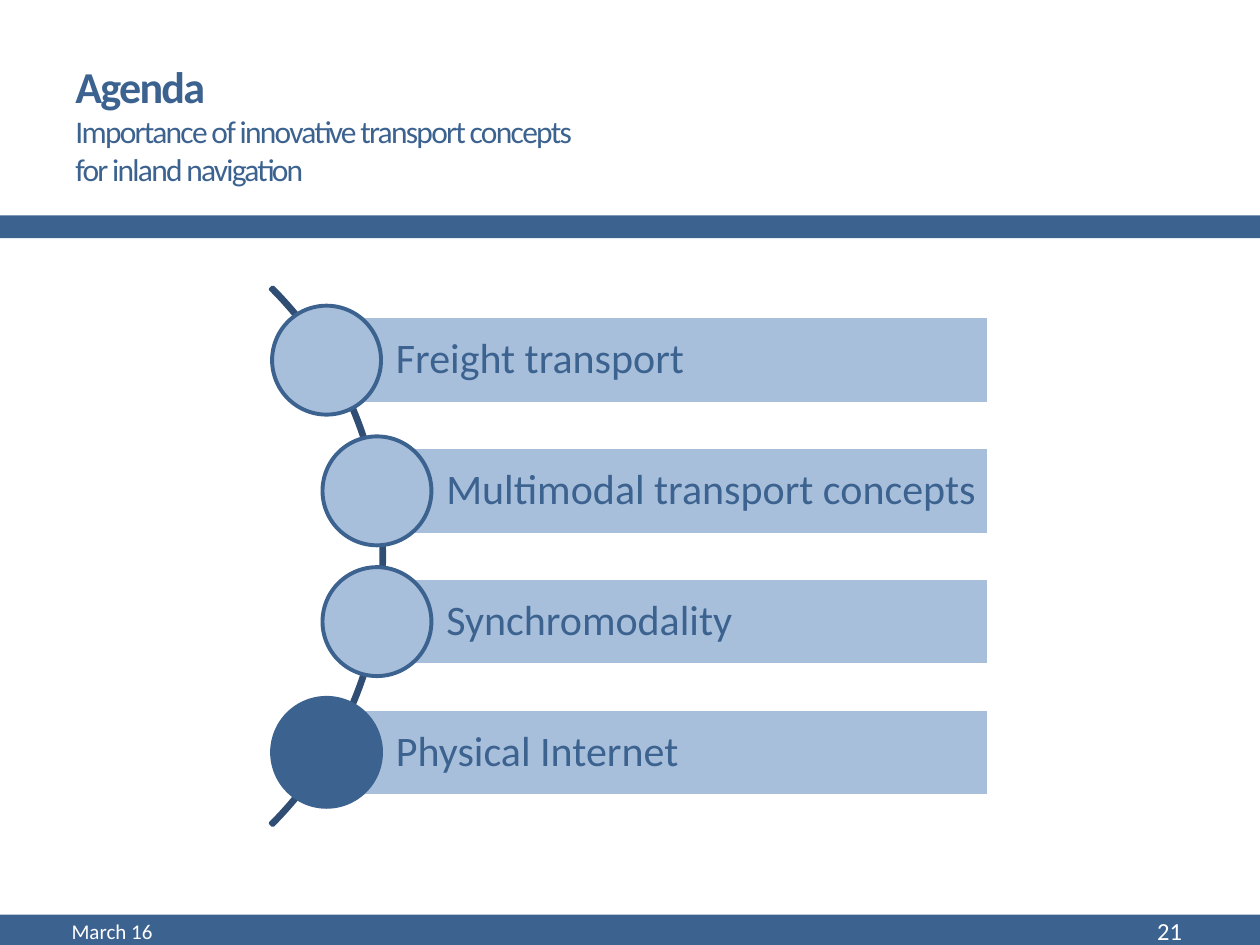
from pptx import Presentation
from pptx.dml.color import RGBColor
from pptx.enum.shapes import MSO_SHAPE as Shape
from pptx.enum.text import MSO_ANCHOR as Anchor, PP_ALIGN as Align
from pptx.util import Inches, Pt

BLUE = RGBColor(0x3C, 0x62, 0x8F)
LIGHT_BLUE = RGBColor(0xA8, 0xBF, 0xDB)
DARK_BLUE = RGBColor(0x30, 0x4E, 0x73)
WHITE = RGBColor(0xFF, 0xFF, 0xFF)
FONT = "Calibri"
WIDTH, HEIGHT = 10, 7.5

TOPICS = ["Freight transport", "Multimodal transport concepts",
          "Synchromodality", "Physical Internet"]
CURRENT_TOPIC = 3


def add_figure(slide, kind, box, fill=None, line=None, line_width=2.08):
    figure = slide.shapes.add_shape(kind, *map(Inches, box))
    figure.shadow.inherit = False
    if fill is None:
        figure.fill.background()
    else:
        figure.fill.solid()
        figure.fill.fore_color.rgb = fill
    if line is None:
        figure.line.fill.background()
    else:
        figure.line.color.rgb = line
        figure.line.width = Pt(line_width)
    return figure


def write(shape, text, sizes, color, align=Align.LEFT):
    """Fill the shape with one paragraph; sizes holds one size per line."""
    frame = shape.text_frame
    frame.word_wrap = True
    frame.vertical_anchor = Anchor.MIDDLE
    paragraph = frame.paragraphs[0]
    paragraph.text = text
    paragraph.alignment = align
    for run, size in zip(paragraph.runs, sizes):
        run.font.name = FONT
        run.font.size = Pt(size)
        run.font.color.rgb = color
    return paragraph


def add_label(slide, box, text, sizes, color, align=Align.LEFT):
    label = slide.shapes.add_textbox(*map(Inches, box))
    return write(label, text, sizes, color, align)


def add_header(slide, left, top, width, height):
    # Rule along the bottom of the header, bleeding over both edges
    rule = 0.18
    add_figure(slide, Shape.RECTANGLE,
               (left - 0.02, top + height - rule, width + 0.12, rule), BLUE)
    # Title with a two-line subtitle
    title = add_label(
        slide, (left + 0.5, top + 0.44, 5.21, 1.08),
        "Agenda\vImportance of innovative transport concepts\vfor inland navigation",
        (25.2, 18, 18), BLUE)
    title.runs[0].font.bold = True
    for run in title.runs:
        run.font._element.set("spc", "-100")


def add_agenda(slide, left, top, width, height):
    row = height / len(TOPICS)
    bar_height, circle = row * 2 / 3, row * 5 / 6
    indent = 0.4

    # Arc that links the circles: a quarter of a large ring
    diameter = 6.04
    arc = add_figure(slide, Shape.BLOCK_ARC,
                     (left + 0.89 - diameter, top + (height - diameter) / 2,
                      diameter, diameter), line=DARK_BLUE)
    for index, value in enumerate((189, 27, 0.004)):
        arc.adjustments[index] = value

    for index, topic in enumerate(TOPICS):
        middle = top + (index + 0.5) * row
        is_inner = 0 < index < len(TOPICS) - 1
        circle_left = left + (indent if is_inner else 0)
        bar_left = circle_left + circle / 2

        # Topic bar
        bar = add_figure(slide, Shape.RECTANGLE,
                         (bar_left, middle - bar_height / 2,
                          left + width - bar_left, bar_height),
                         LIGHT_BLUE, WHITE)
        frame = bar.text_frame
        frame.margin_left = Inches(0.55)
        frame.margin_top = frame.margin_right = frame.margin_bottom = Inches(0.07)
        write(bar, topic, (24,), BLUE).line_spacing = 0.9

        # Circle, dark for the current topic
        add_figure(slide, Shape.OVAL,
                   (circle_left, middle - circle / 2, circle, circle),
                   BLUE if index == CURRENT_TOPIC else LIGHT_BLUE, BLUE, 2.25)


def add_footer(slide, left, top, width, height):
    add_figure(slide, Shape.RECTANGLE,
               (left - 0.04, top, width + 0.16, height), BLUE)
    label_top, label_height = top - 0.05, 0.36
    add_label(slide, (left + 0.47, label_top, 3.17, label_height),
              "March 16", (12,), WHITE)
    add_label(slide, (left + 8.31, label_top, 1.17, label_height),
              "21", (14,), WHITE, Align.RIGHT)


def main():
    deck = Presentation()
    deck.slide_width, deck.slide_height = Inches(WIDTH), Inches(HEIGHT)
    slide = deck.slides.add_slide(deck.slide_layouts[6])
    add_header(slide, 0, 0, WIDTH, 1.89)
    add_agenda(slide, 2.16, 2.34, 5.69, 4.15)
    add_footer(slide, 0, 7.26, WIDTH, 0.5)
    deck.save("out.pptx")


if __name__ == "__main__":
    main()
